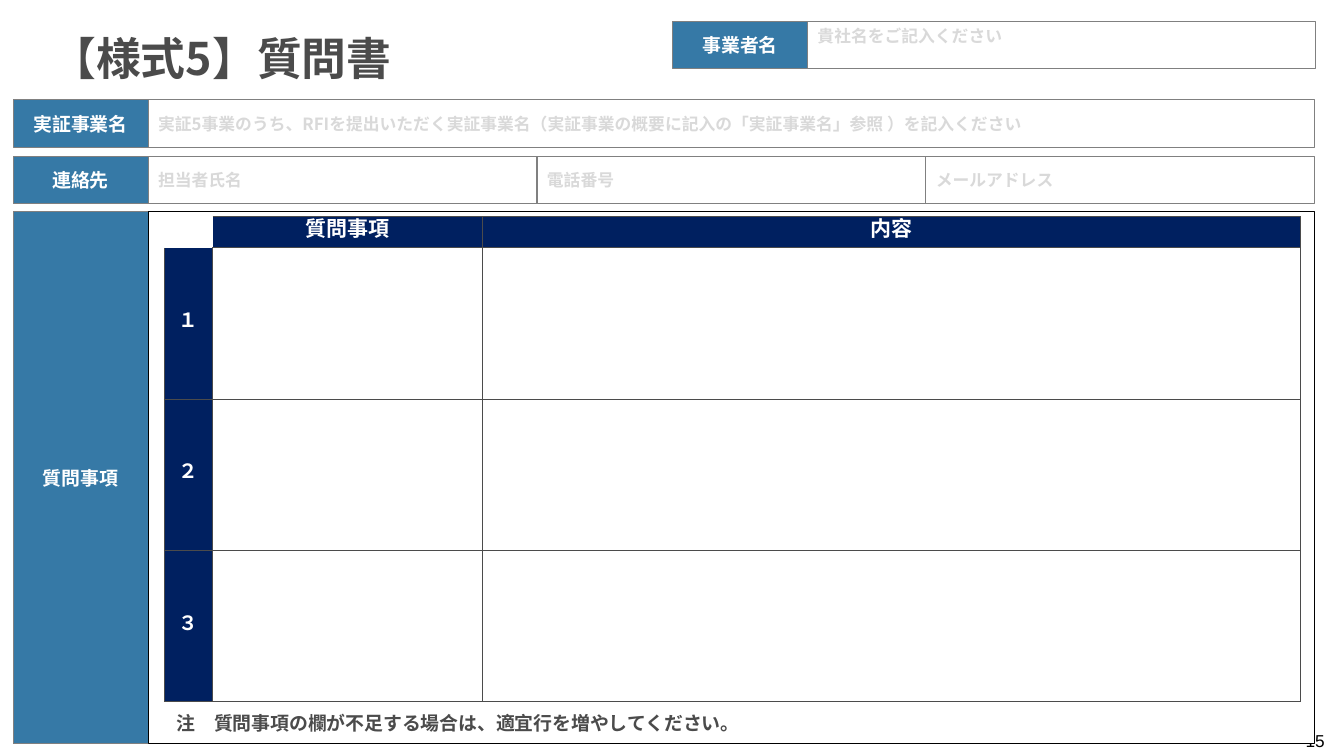
from lxml import etree
from pptx import Presentation
from pptx import util as u
from pptx.dml.color import RGBColor
from pptx.enum import shapes, text
from pptx.oxml.ns import qn

FONT = "Noto Sans CJK JP"
WHITE, BLACK, GREY, INK = "FFFFFF", "000000", "808080", "4B4B4B"
BLUE, NAVY, HINT = "045890", "002060", "D9D9D9"
LEFT, MIDDLE = text.PP_ALIGN.LEFT, text.MSO_ANCHOR.MIDDLE
CENTER, TOP = text.PP_ALIGN.CENTER, text.MSO_ANCHOR.TOP

TITLE = "【様式5】質問書"
COMPANY = ("事業者名", "貴社名をご記入ください")
PROJECT = ("実証事業名", "実証5事業のうち、RFIを提出いただく実証事業名"
           "（実証事業の概要に記入の「実証事業名」参照 ）を記入ください")
CONTACT = ("連絡先", ["担当者氏名", "電話番号", "メールアドレス"])
QUESTIONS = "質問事項"
TABLE = [["", "質問事項", "内容"],
         ["１", "", ""],
         ["２", "", ""],
         ["３", "", ""]]
NOTE = "注\u3000質問事項の欄が不足する場合は、適宜行を増やしてください。"
PAGE_NUMBER = "15"

# Form grid, in inches
LABEL_X, LABEL_W, FIELD_W, ROW_H = 0.13, 1.34, 11.57, 0.47
FIELD_X = LABEL_X + LABEL_W
COMPANY_X, COMPANY_Y, COMPANY_W = 6.67, 0.21, 5.04
PROJECT_Y, CONTACT_Y, QUESTIONS_Y, QUESTIONS_H = 0.99, 1.55, 2.1, 5.28
TABLE_X, TABLE_Y = 1.63, 2.15
COLUMNS, ROWS = [0.48, 2.68, 8.11], [0.31, 1.5, 1.5, 1.5]


def rgb(value):
    return RGBColor.from_string(value)


def write(frame, words, size, color, align=LEFT, font=FONT, bold=True):
    para = frame.paragraphs[0]
    para.alignment = align
    if words:
        span = para.add_run()
        span.text = words
        span.font.size, span.font.bold, span.font.name = u.Pt(size), bold, font
        span.font.color.rgb = rgb(color)
        etree.SubElement(span._r.get_or_add_rPr(), qn("a:ea"), typeface=font)
    return para


def add_text(page, at, words, size, color, anchor=MIDDLE, inset=(0.12, 0.06), **style):
    box = page.shapes.add_textbox(*map(u.Inches, at))
    frame = box.text_frame
    frame.word_wrap, frame.vertical_anchor = True, anchor
    frame.margin_left = frame.margin_right = u.Inches(inset[0])
    frame.margin_top = frame.margin_bottom = u.Inches(inset[1])
    write(frame, words, size, color, **style)


def add_box(page, at, words="", size=12, color=HINT, fill=None, line=GREY,
            width=0.5, align=LEFT, anchor=MIDDLE):
    box = page.shapes.add_shape(shapes.MSO_SHAPE.RECTANGLE, *map(u.Inches, at))
    box.shadow.inherit = False
    if fill:
        box.fill.solid()
        box.fill.fore_color.rgb = rgb(fill)
    else:
        box.fill.background()
    box.line.color.rgb, box.line.width = rgb(line), u.Pt(width)
    box.text_frame.word_wrap, box.text_frame.vertical_anchor = True, anchor
    write(box.text_frame, words, size, color, align)
    return box


def add_label(page, x, y, words, height=ROW_H):
    box = add_box(page, (x, y, LABEL_W, height), words, 13.5, WHITE, BLUE, align=CENTER)
    tint = box.fill._xPr.find(".//" + qn("a:srgbClr"))
    etree.SubElement(tint, qn("a:alpha"), val="80000")


def set_borders(cell, hidden):
    """Draw the four cell edges, leaving out the sides named in hidden."""
    props = cell._tc.get_or_add_tcPr()
    for place, side in enumerate("LRTB"):
        edge = etree.Element(qn("a:ln" + side), w=str(u.Pt(0.75)))
        props.insert(place, edge)
        if side in hidden:
            etree.SubElement(edge, qn("a:noFill"))
        else:
            paint = etree.SubElement(edge, qn("a:solidFill"))
            etree.SubElement(paint, qn("a:srgbClr"), val=INK)


def add_question_table(page):
    holder = page.shapes.add_table(len(ROWS), len(COLUMNS), *map(
        u.Inches, (TABLE_X, TABLE_Y, sum(COLUMNS), sum(ROWS))))
    table = holder.table
    table.first_row = table.horz_banding = False
    table._tbl.tblPr.find(qn("a:tableStyleId")).text = "{2D5ABB26-0587-4C30-8999-92F81FD0307C}"
    for column, width in zip(table.columns, COLUMNS):
        column.width = u.Inches(width)
    for row, height in zip(table.rows, ROWS):
        row.height = u.Inches(height)
    hidden_sides = {(0, 0): "LRTB", (0, 1): "L", (1, 0): "T"}
    for r, row in enumerate(TABLE):
        for c, words in enumerate(row):
            cell = table.cell(r, c)
            cell.vertical_anchor = MIDDLE
            cell.margin_left = cell.margin_right = u.Inches(0.08)
            cell.margin_top = cell.margin_bottom = 0
            if r == c == 0:
                cell.fill.background()
            else:
                cell.fill.solid()
                cell.fill.fore_color.rgb = rgb(NAVY if r == 0 or c == 0 else WHITE)
            para = write(cell.text_frame, words, 14 if r else 15, WHITE, CENTER)
            para.line_spacing = u.Pt(14)
            props = para._p.get_or_add_pPr()
            props.set("marL", str(u.Inches(0.22)))
            props.set("indent", str(u.Inches(-0.22)))
            set_borders(cell, hidden_sides.get((r, c), ""))


def main():
    deck = Presentation()
    deck.slide_width, deck.slide_height = u.Inches(13.33), u.Inches(7.5)
    page = deck.slides.add_slide(deck.slide_layouts[6])

    add_text(page, (12.51, 7.17, 0.75, 0.35), PAGE_NUMBER, 12.3, BLACK,
             align=text.PP_ALIGN.RIGHT, font="Arial", bold=False)
    add_text(page, (0.41, 0.4, 12.51, 0.49), TITLE, 32, INK,
             anchor=text.MSO_ANCHOR.BOTTOM, inset=(0.1, 0.05))
    page.shapes[-1].text_frame.paragraphs[0].line_spacing = 0.9

    add_label(page, LABEL_X, QUESTIONS_Y, QUESTIONS, QUESTIONS_H)
    add_box(page, (FIELD_X, QUESTIONS_Y, FIELD_W, QUESTIONS_H), fill=WHITE, line=BLACK)
    add_question_table(page)
    add_text(page, (TABLE_X, 7, sum(COLUMNS), 0.35), NOTE, 13.5, INK)

    add_box(page, (FIELD_X, PROJECT_Y, FIELD_W, ROW_H), PROJECT[1], width=0.75)
    add_label(page, LABEL_X, PROJECT_Y, PROJECT[0])

    add_label(page, COMPANY_X, COMPANY_Y, COMPANY[0])
    add_box(page, (COMPANY_X + LABEL_W, COMPANY_Y, COMPANY_W, ROW_H), COMPANY[1],
            fill=WHITE, anchor=TOP)

    add_label(page, LABEL_X, CONTACT_Y, CONTACT[0])
    part = FIELD_W / len(CONTACT[1])
    for i, hint in enumerate(CONTACT[1]):
        add_box(page, (FIELD_X + i * part, CONTACT_Y, part, ROW_H), hint, width=0.75)

    deck.save("out.pptx")


if __name__ == "__main__":
    main()
